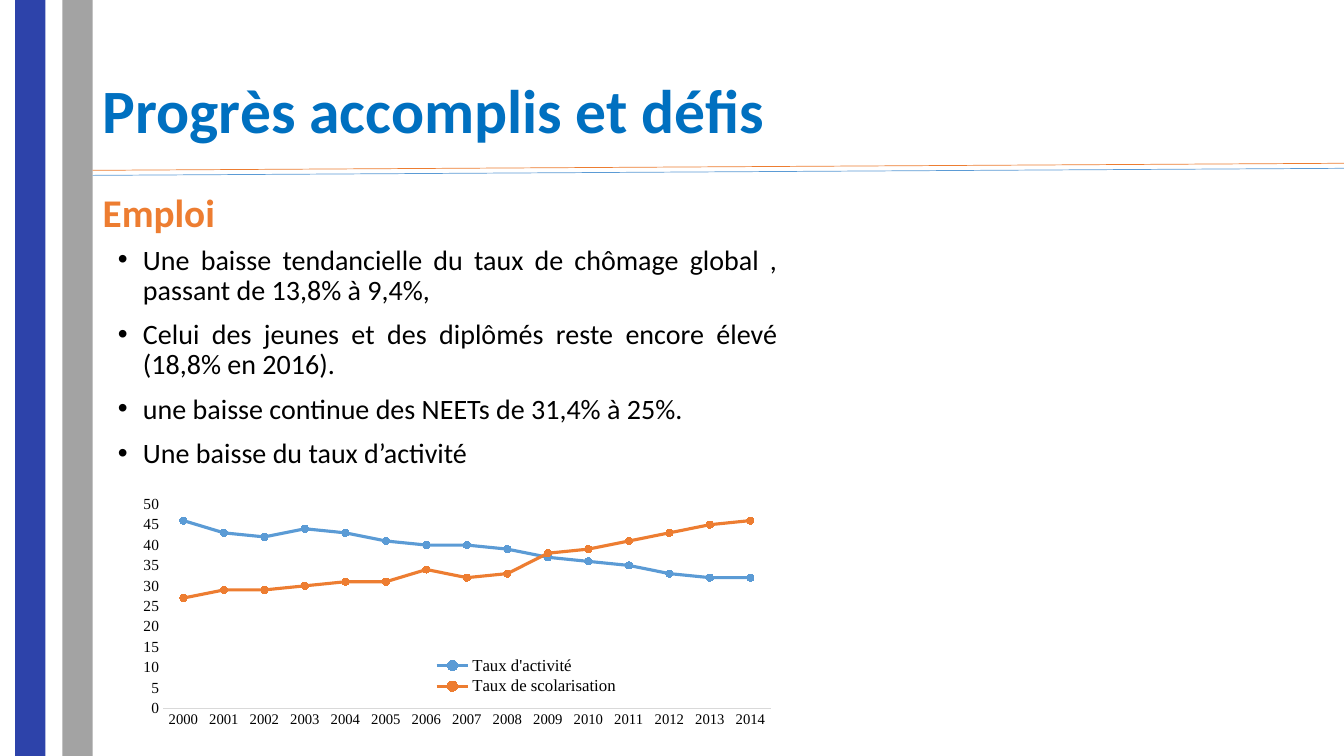
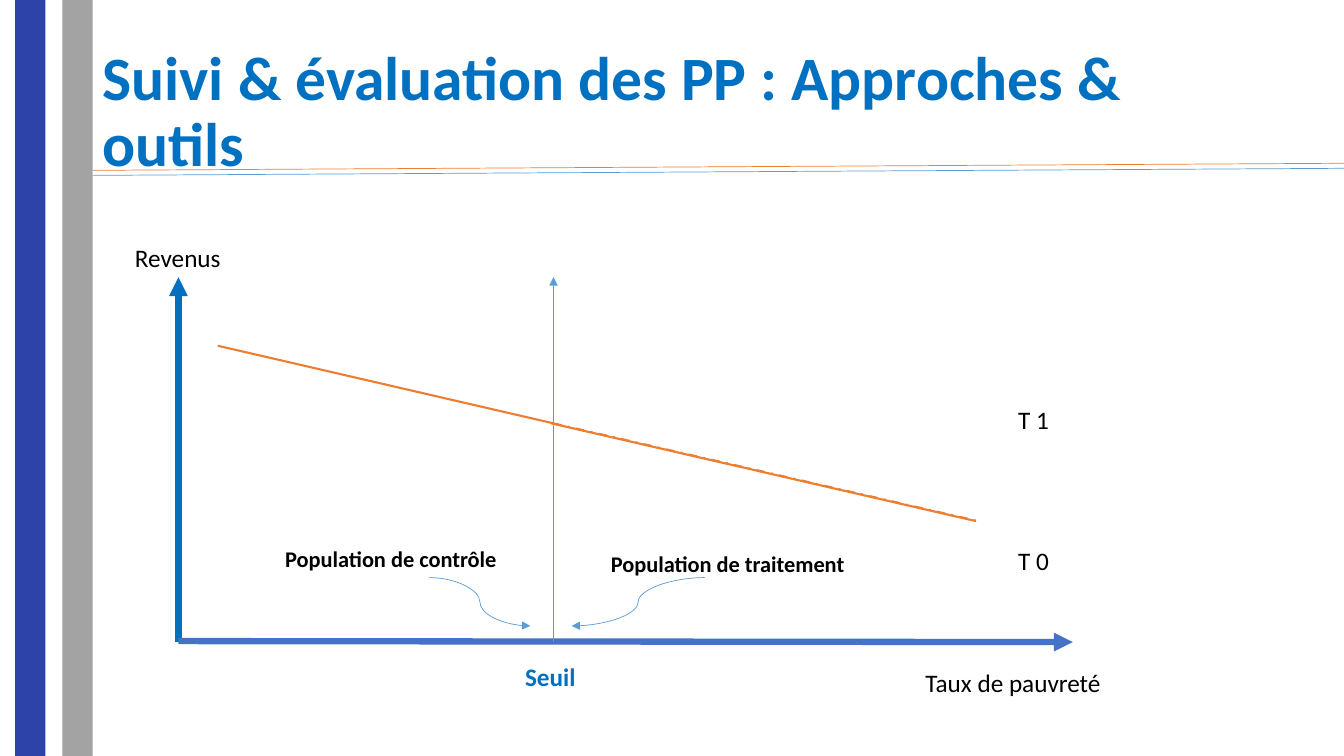
from dataclasses import dataclass
from typing import Optional

from lxml import etree
from pptx import Presentation
from pptx.chart.chart import Chart
from pptx.chart.data import CategoryChartData
from pptx.dml.color import RGBColor
from pptx.enum.chart import XL_CHART_TYPE, XL_LEGEND_POSITION, XL_MARKER_STYLE, XL_TICK_MARK
from pptx.enum.dml import MSO_LINE
from pptx.enum.shapes import MSO_CONNECTOR, MSO_SHAPE
from pptx.enum.text import MSO_ANCHOR, MSO_AUTO_SIZE, PP_ALIGN
from pptx.oxml.ns import qn
from pptx.shapes.autoshape import Shape
from pptx.shapes.connector import Connector
from pptx.slide import Slide
from pptx.util import Inches, Pt

LINE_MARKERS = XL_CHART_TYPE.LINE_MARKERS
LEGEND_BOTTOM = XL_LEGEND_POSITION.BOTTOM
CIRCLE = XL_MARKER_STYLE.CIRCLE
NO_TICK = XL_TICK_MARK.NONE
DASH_DOT = MSO_LINE.DASH_DOT
STRAIGHT = MSO_CONNECTOR.STRAIGHT
CURVE = MSO_CONNECTOR.CURVE
RECTANGLE = MSO_SHAPE.RECTANGLE
MIDDLE = MSO_ANCHOR.MIDDLE
GROW = MSO_AUTO_SIZE.SHAPE_TO_FIT_TEXT
JUSTIFY = PP_ALIGN.JUSTIFY
BOTTOM_SITE = 2

SLIDE_WIDTH, SLIDE_HEIGHT = 13.33, 7.5
TEXT_FONT, CHART_FONT = "Calibri", "Times New Roman"
BLACK = "000000"
TITLE_BLUE = "0070C0"
AXIS_BLUE = "4472C4"
LIGHT_BLUE = "5B9BD5"
ORANGE = "ED7D31"
BAND_BLUE = "2D43AA"
BAND_GREY = "A3A3A3"
PALE_GREY = "D9D9D9"

BAND_WIDTH = 0.3
BANDS = ((0.15, BAND_BLUE), (0.62, BAND_GREY))
CONTENT_LEFT = 0.92

BULLETS = (
    "Une baisse tendancielle du taux de chômage global , passant de 13,8% à 9,4%,",
    "Celui des jeunes et des diplômés reste encore élevé (18,8% en 2016).",
    "une baisse continue des NEETs de 31,4% à 25%.",
    "Une baisse du taux d’activité",
)
YEARS = [str(year) for year in range(2000, 2015)]


@dataclass(frozen=True)
class Series:
    name: str
    color: str
    values: tuple[int, ...]


@dataclass(frozen=True)
class Label:
    text: str
    left: float
    top: float
    width: float
    size: int = 18
    color: str = BLACK
    bold: bool = False


@dataclass(frozen=True)
class Stroke:
    start: tuple[float, float]
    end: tuple[float, float]
    color: str
    weight: float
    arrow: bool = False
    dash: Optional[MSO_LINE] = None
    kind: MSO_CONNECTOR = STRAIGHT


SERIES = (
    Series("Taux d'activité", LIGHT_BLUE,
           (46, 43, 42, 44, 43, 41, 40, 40, 39, 37, 36, 35, 33, 32, 32)),
    Series("Taux de scolarisation", ORANGE,
           (27, 29, 29, 30, 31, 31, 34, 32, 33, 38, 39, 41, 43, 45, 46)),
)

HEADER_RULES = (
    Stroke((CONTENT_LEFT, 1.69), (SLIDE_WIDTH, 1.62), ORANGE, 0.5),
    Stroke((CONTENT_LEFT, 1.74), (SLIDE_WIDTH, 1.67), LIGHT_BLUE, 0.5),
)

ORIGIN_X, AXIS_Y, AXIS_TOP = 1.77, 6.37, 2.75
THRESHOLD_X, CROSSING_Y = 5.49, 4.2
INCOME_LABEL = Label("Revenus", 1.24, 2.35, 1.06)
INCOME_AXIS = Stroke((ORIGIN_X, AXIS_Y), (ORIGIN_X, AXIS_TOP), TITLE_BLUE, 4.5, arrow=True)
DIAGRAM_STROKES = (
    Stroke((ORIGIN_X, 6.36), (10.64, AXIS_Y), AXIS_BLUE, 4.5, arrow=True),
    Stroke((2.16, 3.43), (THRESHOLD_X, CROSSING_Y), ORANGE, 1.5),
    Stroke((THRESHOLD_X, CROSSING_Y), (9.7, 5.17), ORANGE, 1.5, dash=DASH_DOT),
    Stroke((THRESHOLD_X, AXIS_Y), (THRESHOLD_X, AXIS_TOP), LIGHT_BLUE, 0.5, arrow=True),
    Stroke((6.99, 5.73), (5.67, 6.21), LIGHT_BLUE, 0.5, arrow=True, kind=CURVE),
    Stroke((4.26, 5.73), (5.26, 6.21), LIGHT_BLUE, 0.5, arrow=True, kind=CURVE),
    Stroke((5.47, CROSSING_Y), (9.68, 5.17), ORANGE, 1.5),
)
DIAGRAM_LABELS = (
    Label("Taux de pauvreté", 9.08, 6.57, 1.96),
    Label("Population de contrôle", 2.73, 5.36, 2.33, 16, bold=True),
    Label("Population de traitement", 5.96, 5.41, 2.55, 16, bold=True),
    Label("Seuil", 5.11, 6.51, 0.76, color=TITLE_BLUE, bold=True),
    Label("T 0", 10, 5.36, 0.51),
    Label("T 1", 10, 3.96, 0.51),
)


def rgb(color: str) -> RGBColor:
    return RGBColor.from_string(color)


def style_font(font, size: float, color: str = BLACK, bold: bool = False,
               name: str = TEXT_FONT) -> None:
    font.name, font.size, font.bold = name, Pt(size), bold
    font.color.rgb = rgb(color)


def add_text(slide: Slide, text: str, left: float, top: float, width: float, height: float,
             size: float, color: str = BLACK, bold: bool = False) -> Shape:
    """Add a wrapping text box, one paragraph for each line of text."""
    box = slide.shapes.add_textbox(Inches(left), Inches(top), Inches(width), Inches(height))
    box.text_frame.word_wrap = True
    box.text_frame.text = text
    for paragraph in box.text_frame.paragraphs:
        for run in paragraph.runs:
            style_font(run.font, size, color, bold)
    return box


def add_label(slide: Slide, label: Label) -> Shape:
    height = 0.4 if label.size == 18 else 0.37
    box = add_text(slide, label.text, label.left, label.top, label.width, height,
                   label.size, label.color, label.bold)
    box.text_frame.word_wrap = False
    box.text_frame.auto_size = GROW
    return box


def add_stroke(slide: Slide, stroke: Stroke) -> Connector:
    points = [Inches(value) for value in stroke.start + stroke.end]
    connector = slide.shapes.add_connector(stroke.kind, *points)
    connector.line.color.rgb = rgb(stroke.color)
    connector.line.width = Pt(stroke.weight)
    if stroke.dash is not None:
        connector.line.dash_style = stroke.dash
    properties = connector.element.spPr
    if stroke.arrow:
        etree.SubElement(properties.find(qn("a:ln")), qn("a:tailEnd"), type="triangle")
    etree.SubElement(properties, qn("a:effectLst"))
    return connector


def add_frame(slide: Slide, title: str) -> None:
    """Draw what every slide shares: title, side bands and header rules."""
    box = add_text(slide, title, CONTENT_LEFT, 0.4, 11.5, 1.45, 44, TITLE_BLUE, True)
    box.text_frame.vertical_anchor = MIDDLE
    box.text_frame.paragraphs[0].line_spacing = 0.9
    for left, color in BANDS:
        band = slide.shapes.add_shape(RECTANGLE, Inches(left), 0,
                                      Inches(BAND_WIDTH), Inches(SLIDE_HEIGHT))
        band.shadow.inherit = False
        band.fill.solid()
        band.fill.fore_color.rgb = rgb(color)
        band.line.fill.background()
    for rule in HEADER_RULES:
        add_stroke(slide, rule)


def add_bullets(slide: Slide) -> None:
    box = add_text(slide, "\n".join(BULLETS), 1.07, 2.39, 6.74, 2.2, 20)
    for paragraph in box.text_frame.paragraphs:
        paragraph.alignment = JUSTIFY
        paragraph.line_spacing = 0.9
        paragraph.space_before = Pt(10)
        properties = paragraph._p.get_or_add_pPr()
        properties.set("marL", str(Inches(0.25)))
        properties.set("indent", str(-Inches(0.25)))
        etree.SubElement(properties, qn("a:buFont"), typeface="Arial")
        etree.SubElement(properties, qn("a:buChar"), char="•")


def manual_layout(parent, index: int, inner: bool, **fractions: float) -> None:
    """Place a chart part by fractions of the chart area."""
    for old_layout in parent.findall(qn("c:layout")):
        parent.remove(old_layout)
    layout = etree.Element(qn("c:layout"))
    manual = etree.SubElement(layout, qn("c:manualLayout"))
    if inner:
        etree.SubElement(manual, qn("c:layoutTarget"), val="inner")
    for mode in ("xMode", "yMode"):
        etree.SubElement(manual, qn(f"c:{mode}"), val="edge")
    for name, fraction in fractions.items():
        etree.SubElement(manual, qn(f"c:{name}"), val=str(fraction))
    parent.insert(index, layout)


def style_axes(chart: Chart) -> None:
    years, rates = chart.category_axis, chart.value_axis
    for axis, size in ((years, 10.5), (rates, 11)):
        axis.major_tick_mark = axis.minor_tick_mark = NO_TICK
        axis.has_major_gridlines = False
        style_font(axis.tick_labels.font, size, name=CHART_FONT)
    years.format.line.color.rgb = rgb(PALE_GREY)
    years.format.line.width = Pt(0.75)
    rates.format.line.fill.background()
    rates.minimum_scale, rates.maximum_scale, rates.major_unit = 0, 50, 5
    rates.tick_labels.number_format = "#,##0"
    rates.tick_labels.number_format_is_linked = False


def add_rate_chart(slide: Slide) -> None:
    data = CategoryChartData()
    data.categories = YEARS
    for series in SERIES:
        data.add_series(series.name, series.values)
    chart = slide.shapes.add_chart(LINE_MARKERS, Inches(1.16), Inches(4.85),
                                   Inches(6.55), Inches(2.56), data).chart
    chart.has_title = False
    style_font(chart.font, 16, name=CHART_FONT)
    style_axes(chart)
    chart.plots[0].vary_by_categories = False
    for plotted, series in zip(chart.plots[0].series, SERIES):
        plotted.smooth = False
        plotted.format.line.color.rgb = rgb(series.color)
        plotted.format.line.width = Pt(2.25)
        plotted.marker.style, plotted.marker.size = CIRCLE, 5
        plotted.marker.format.fill.solid()
        plotted.marker.format.fill.fore_color.rgb = rgb(series.color)
        plotted.marker.format.line.color.rgb = rgb(series.color)
    chart.has_legend = True
    chart.legend.position = LEGEND_BOTTOM
    chart.legend.include_in_layout = True
    style_font(chart.legend.font, 12, name=CHART_FONT)
    plot_area = chart.element.find(".//" + qn("c:plotArea"))
    legend = chart.element.find(".//" + qn("c:legend"))
    manual_layout(plot_area, 0, True, x=0.07, y=0.06, w=0.92, h=0.79)
    manual_layout(legend, 1, False, x=0.47, y=0.64, w=0.3, h=0.17)


def build_employment_slide(slide: Slide) -> None:
    add_frame(slide, "Progrès accomplis et défis")
    heading = add_text(slide, "Emploi", CONTENT_LEFT, 1.87, 11.5, 0.54, 28, ORANGE, True)
    heading.text_frame.paragraphs[0].line_spacing = 0.9
    add_bullets(slide)
    add_rate_chart(slide)


def build_evaluation_slide(slide: Slide) -> None:
    add_frame(slide, "Suivi & évaluation des PP : Approches & outils")
    income_label = add_label(slide, INCOME_LABEL)
    add_stroke(slide, INCOME_AXIS).end_connect(income_label, BOTTOM_SITE)
    for stroke in DIAGRAM_STROKES:
        add_stroke(slide, stroke)
    for label in DIAGRAM_LABELS:
        add_label(slide, label)


def main() -> None:
    presentation = Presentation()
    presentation.slide_width = Inches(SLIDE_WIDTH)
    presentation.slide_height = Inches(SLIDE_HEIGHT)
    blank_layout = presentation.slide_layouts[6]
    for build in (build_employment_slide, build_evaluation_slide):
        build(presentation.slides.add_slide(blank_layout))
    presentation.save("out.pptx")


if __name__ == "__main__":
    main()
